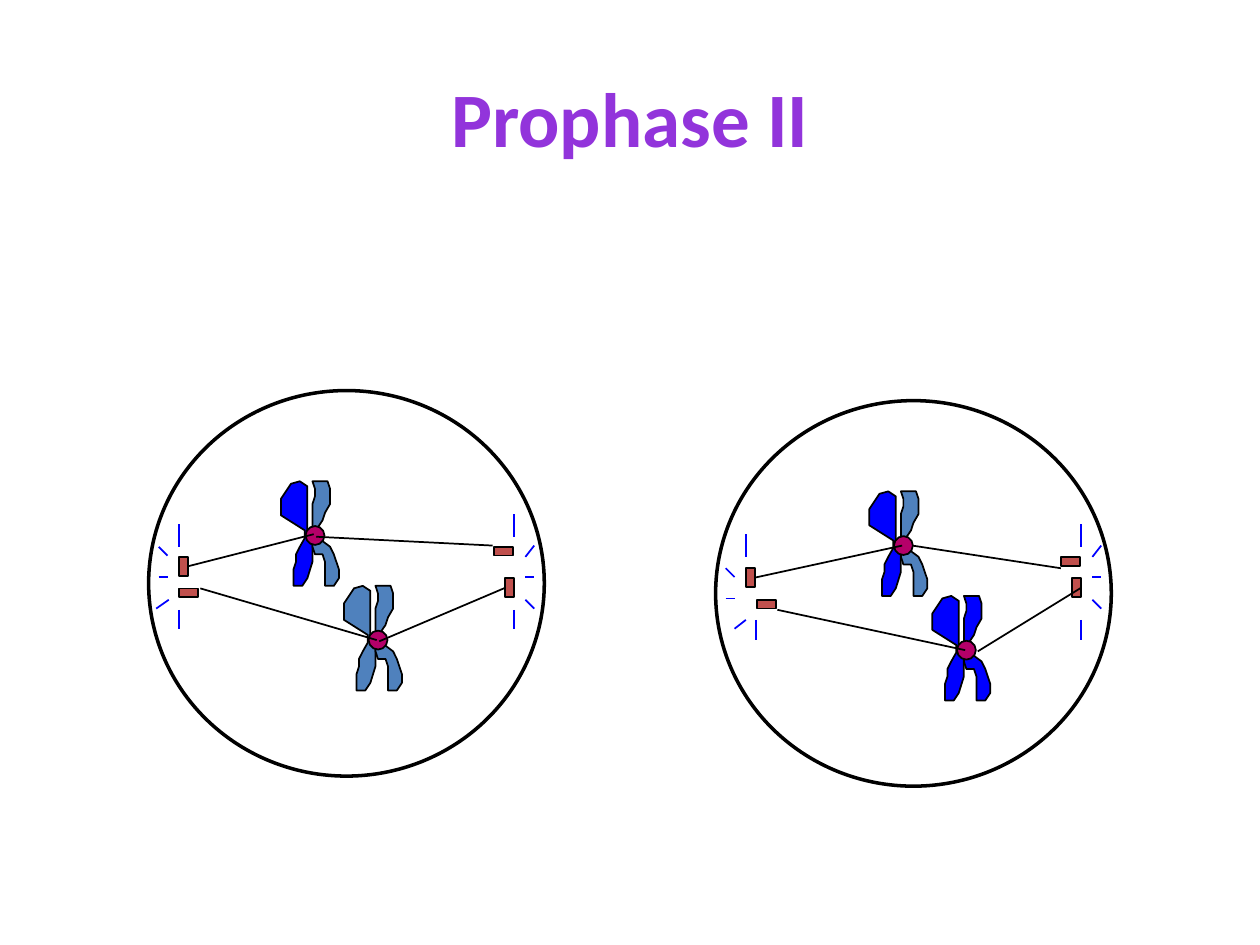
from dataclasses import dataclass
from typing import Optional

from lxml.etree import SubElement
from pptx import Presentation
from pptx.dml.color import RGBColor as Rgb
from pptx.enum.shapes import MSO_CONNECTOR as Link, MSO_SHAPE as Kind
from pptx.enum.text import MSO_ANCHOR as Anchor, PP_ALIGN as Align
from pptx.oxml.ns import qn
from pptx.util import Inches, Pt

Point = tuple[float, float]


@dataclass(frozen=True)
class Theme:
    font: str = "Calibri"
    title: Rgb = Rgb(0x92, 0x34, 0xDB)
    ink: Rgb = Rgb(0, 0, 0)
    blue: Rgb = Rgb(0, 0, 0xFF)
    steel: Rgb = Rgb(0x4F, 0x81, 0xBD)
    hub: Rgb = Rgb(0xB5, 0x00, 0x69)
    bar: Rgb = Rgb(0xC0, 0x50, 0x4D)
    size: Pt = Pt(44)
    thin: Pt = Pt(1)
    thick: Pt = Pt(2)


@dataclass(frozen=True)
class Pair:
    """A chromosome: its centre and the colours of its two chromatids."""
    x: float
    y: float
    left: Rgb
    right: Rgb


@dataclass(frozen=True)
class Bar:
    x: float
    y: float
    tall: bool


@dataclass(frozen=True)
class Ray:
    start: Point
    end: Point


@dataclass(frozen=True)
class Thread:
    """A spindle thread, joined to a side of a bar where one is given."""
    start: Point
    end: Point
    bar: Optional[int] = None
    side: int = 3


@dataclass(frozen=True)
class Cell:
    x: float
    y: float
    pairs: list[Pair]
    bars: list[Bar]
    rays: list[Ray]
    threads: list[Thread]


T = Theme()
CELL_W, CELL_H = 3.14, 3.06
HUB = 0.15
LONG, SHORT = 0.15, 0.07
GAP = 4.5

# Chromatid outlines, measured from the centromere
LEFT = [(0, 0), (-.06, -.02), (-.06, -.39), (-.12, -.43), (-.19, -.41),
        (-.27, -.29), (-.27, -.16), (-.08, -.04), (-.08, .02), (-.12, .09),
        (-.15, .15), (-.15, .21), (-.17, .27), (-.17, .4), (-.1, .4),
        (-.06, .34), (-.02, .21), (-.02, .02)]
RIGHT = [(0, 0), (-.02, -.06), (-.02, -.25), (0, -.31), (0, -.37),
         (-.02, -.43), (.1, -.43), (.12, -.37), (.12, -.25), (.08, -.18),
         (.06, -.12), (.02, -.06), (0, 0), (.12, .09), (.15, .15),
         (.19, .27), (.19, .34), (.15, .4), (.08, .4), (.08, .21),
         (.06, .15), (0, .15), (-.02, .09), (-.02, .02)]


def side_rays(x: float) -> list[Ray]:
    """The three short rays beyond a right pole."""
    return [Ray((x, 4.42), (x + .07, 4.33)),
            Ray((x, 4.58), (x + .07, 4.58)),
            Ray((x, 4.76), (x + .07, 4.83))]


CELLS = [
    Cell(1.18, 3.1,
         [Pair(3, 5.08, T.steel, T.steel), Pair(2.5, 4.25, T.blue, T.steel)],
         [Bar(4.01, 4.59, True), Bar(3.92, 4.34, False),
          Bar(1.42, 4.42, True), Bar(1.42, 4.67, False)],
         side_rays(4.17) + [
             Ray((4.08, 4.26), (4.08, 4.08)), Ray((4.08, 4.84), (4.08, 4.99)),
             Ray((1.34, 4.76), (1.24, 4.83)), Ray((1.26, 4.58), (1.33, 4.58)),
             Ray((1.26, 4.34), (1.33, 4.41)), Ray((1.42, 4.34), (1.42, 4.16)),
             Ray((1.42, 4.84), (1.42, 4.99))],
         [Thread((1.51, 4.51), (2.49, 4.24), 2),
          Thread((3.91, 4.33), (2.51, 4.26)),
          Thread((1.59, 4.67), (2.99, 5.08)),
          Thread((3.99, 4.66), (3.01, 5.09), 0, 1)]),
    Cell(1.18 + GAP, 3.18,
         [Pair(7.17, 4.33, T.blue, T.steel), Pair(7.67, 5.16, T.blue, T.blue)],
         [Bar(8.51, 4.59, True), Bar(8.42, 4.42, False),
          Bar(5.92, 4.51, True), Bar(6.01, 4.76, False)],
         side_rays(4.17 + GAP) + [
             Ray((8.58, 4.34), (8.58, 4.16)), Ray((8.58, 4.92), (8.58, 5.08)),
             Ray((5.92, 4.92), (5.83, 4.99)), Ray((5.76, 4.75), (5.83, 4.75)),
             Ray((5.76, 4.51), (5.83, 4.58)), Ray((5.92, 4.42), (5.92, 4.24)),
             Ray((6, 4.92), (6, 5.08))],
         [Thread((6.01, 4.59), (7.16, 4.33), 2),
          Thread((8.42, 4.51), (7.24, 4.33)),
          Thread((6.17, 4.84), (7.66, 5.16)),
          Thread((8.58, 4.66), (7.76, 5.17), 0)]),
]


def style(shape, fill: Optional[Rgb], width: Pt = T.thin) -> None:
    shape.shadow.inherit = False
    if fill is None:
        shape.fill.background()
    else:
        shape.fill.solid()
        shape.fill.fore_color.rgb = fill
    shape.line.color.rgb = T.ink
    shape.line.width = width


def add_box(slide, kind: Kind, x: float, y: float, w: float, h: float,
            fill: Optional[Rgb], width: Pt = T.thin):
    shape = slide.shapes.add_shape(
        kind, Inches(x), Inches(y), Inches(w), Inches(h))
    style(shape, fill, width)
    return shape


def add_line(slide, start: Point, end: Point, color: Rgb):
    ends = [Inches(v) for v in (*start, *end)]
    line = slide.shapes.add_connector(Link.STRAIGHT, *ends)
    line.line.color.rgb = color
    line.line.width = T.thin
    SubElement(line._element.spPr, qn("a:effectLst"))
    return line


def add_pair(slide, pair: Pair) -> None:
    for outline, fill in ((LEFT, pair.left), (RIGHT, pair.right)):
        spots = [(Inches(pair.x + dx), Inches(pair.y + dy))
                 for dx, dy in outline]
        path = slide.shapes.build_freeform(*spots[0])
        path.add_line_segments(spots[1:], close=True)
        style(path.convert_to_shape(), fill)
    add_box(slide, Kind.OVAL, pair.x - HUB / 2, pair.y - HUB / 2,
            HUB, HUB, T.hub)


def add_cell(slide, cell: Cell) -> None:
    for pair in cell.pairs:
        add_pair(slide, pair)
    add_box(slide, Kind.OVAL, cell.x, cell.y, CELL_W, CELL_H, None, T.thick)
    bars = []
    for bar in cell.bars:
        w, h = (SHORT, LONG) if bar.tall else (LONG, SHORT)
        bars.append(add_box(slide, Kind.RECTANGLE, bar.x, bar.y, w, h, T.bar))
    for ray in cell.rays:
        add_line(slide, ray.start, ray.end, T.blue)
    for thread in cell.threads:
        line = add_line(slide, thread.start, thread.end, T.ink)
        if thread.bar is not None:
            line.begin_connect(bars[thread.bar], thread.side)


def set_title(slide, text: str) -> None:
    title = slide.shapes.title
    title.left, title.top = Inches(0.5), Inches(0.3)
    title.width, title.height = Inches(9), Inches(1.25)
    frame = title.text_frame
    frame.text = text
    frame.vertical_anchor = Anchor.MIDDLE
    para = frame.paragraphs[0]
    para.alignment = Align.CENTER
    font = para.runs[0].font
    font.name, font.size, font.bold = T.font, T.size, True
    font.color.rgb = T.title


def main() -> None:
    deck = Presentation()
    deck.slide_width, deck.slide_height = Inches(10), Inches(7.5)
    slide = deck.slides.add_slide(deck.slide_layouts[5])
    set_title(slide, "Prophase II")
    for cell in CELLS:
        add_cell(slide, cell)
    deck.save("out.pptx")


if __name__ == "__main__":
    main()
